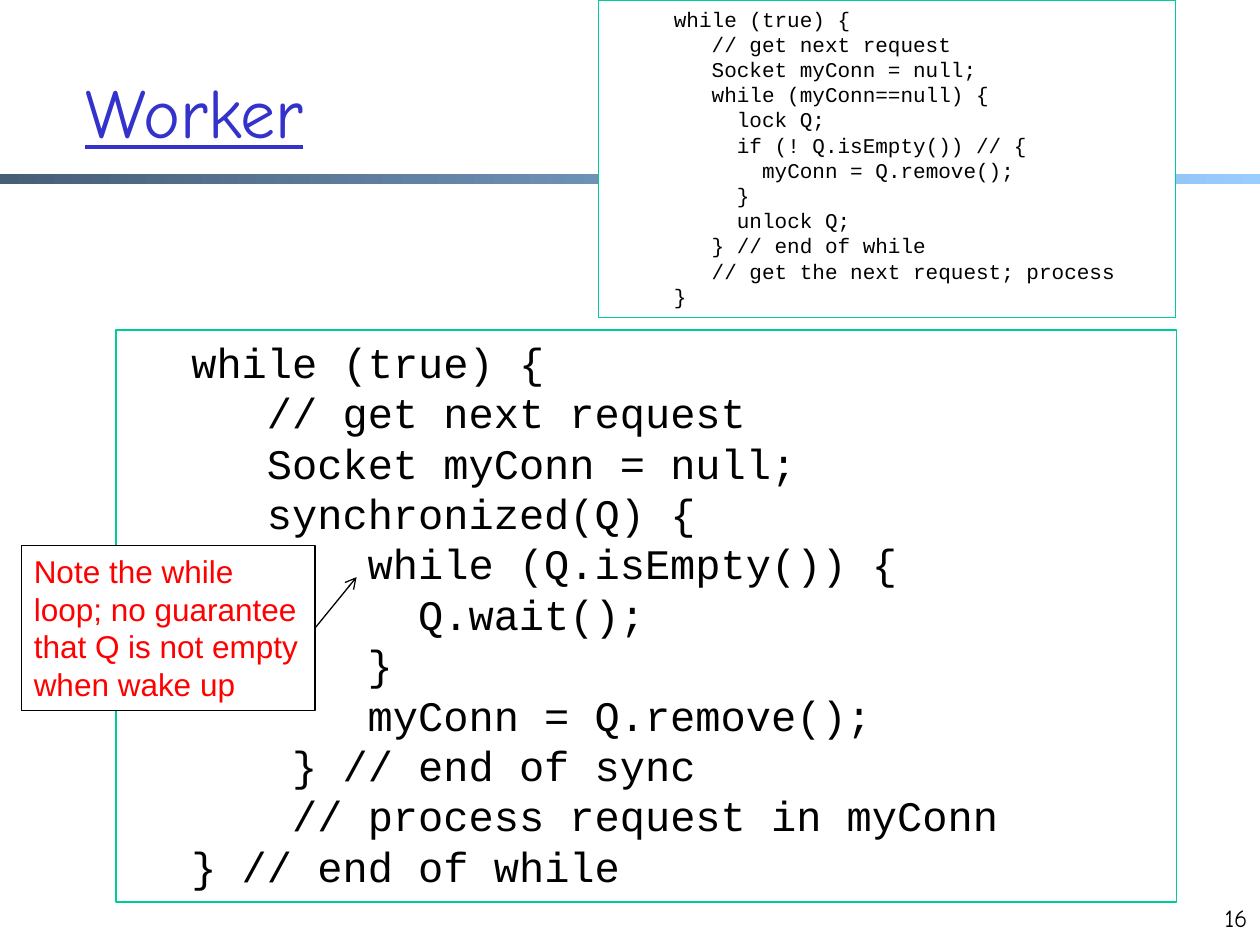
from dataclasses import dataclass

import pptx
import pptx.dml.color
import pptx.enum.dml
import pptx.enum.shapes
import pptx.enum.text
import pptx.oxml
import pptx.oxml.ns
import pptx.util
from pptx.util import Inches

COLORS = {
    "ink": "000000", "paper": "FFFFFF", "title": "3333CC",
    "frame": "00CC99", "note": "FF0000", "dark": "475E76", "light": "99CCFF",
}
RECT = pptx.enum.shapes.MSO_SHAPE.RECTANGLE
ALIGN = pptx.enum.text.PP_ALIGN
ANCHOR = pptx.enum.text.MSO_ANCHOR
CODE_LEFT = 0.5
CHAR_RATIO = 0.6


@dataclass
class Box:
    left: float
    top: float
    width: float
    height: float

    def place(self) -> tuple:
        return tuple(Inches(n) for n in (self.left, self.top, self.width, self.height))


@dataclass
class Font:
    name: str
    size: int
    color: str = "ink"
    line: bool = False


@dataclass
class Code:
    box: Box
    size: int
    fill: str | None
    lines: list[tuple[int, str]]


CODES = [
    Code(Box(0.92, 2.62, 8.42, 4.54), 24, None, [
        (0, "while (true) {"),
        (3, "// get next request"),
        (3, "Socket myConn = null;"),
        (3, "synchronized(Q) {"),
        (7, "while (Q.isEmpty()) {"),
        (9, "Q.wait();"),
        (7, "}"),
        (7, "myConn = Q.remove();"),
        (4, "} // end of sync"),
        (4, "// process request in myConn"),
        (0, "} // end of while"),
    ]),
    Code(Box(4.75, 0, 4.58, 2.52), 12, "paper", [
        (0, "while (true) {"),
        (3, "// get next request"),
        (3, "Socket myConn = null;"),
        (3, "while (myConn==null) {"),
        (5, "lock Q;"),
        (5, "if (! Q.isEmpty()) // {"),
        (7, "myConn = Q.remove();"),
        (5, "}"),
        (5, "unlock Q;"),
        (3, "} // end of while"),
        (3, "// get the next request; process"),
        (0, "}"),
    ]),
]


def rgb(key: str) -> pptx.dml.color.RGBColor:
    return pptx.dml.color.RGBColor.from_string(COLORS[key])


def style(para, font: Font, align=ALIGN.LEFT) -> None:
    para.alignment = align
    para.font.name = font.name
    para.font.size = pptx.util.Pt(font.size)
    para.font.color.rgb = rgb(font.color)
    para.font.underline = font.line


def add_label(slide, box: Box, text: str, font: Font, align, anchor) -> None:
    frame = slide.shapes.add_textbox(*box.place()).text_frame
    frame.word_wrap = True
    frame.vertical_anchor = anchor
    para = frame.paragraphs[0]
    para.text = text
    style(para, font, align)


def add_panel(slide, box: Box, fill: str | None, line: str):
    panel = slide.shapes.add_shape(RECT, *box.place())
    panel.shadow.inherit = False
    if fill:
        panel.fill.solid()
        panel.fill.fore_color.rgb = rgb(fill)
    else:
        panel.fill.background()
    panel.line.color.rgb = rgb(line)
    panel.line.width = pptx.util.Pt(0.75)
    panel.text_frame.word_wrap = True
    panel.text_frame.vertical_anchor = ANCHOR.TOP
    return panel


def add_code(slide, code: Code) -> None:
    frame = add_panel(slide, code.box, code.fill, "frame").text_frame
    font = Font("Courier New", code.size)
    for row, (depth, text) in enumerate(code.lines):
        para = frame.add_paragraph() if row else frame.paragraphs[0]
        para.text = text
        style(para, font)
        left = Inches(CODE_LEFT + depth * CHAR_RATIO * code.size / 72)
        props = para._p.get_or_add_pPr()
        props.set("marL", str(left))
        props.set("indent", "0")


def add_bar(slide) -> None:
    bar = slide.shapes.add_shape(RECT, *Box(0, 1.38, 10, 0.08).place())
    bar.shadow.inherit = False
    bar.line.fill.background()
    bar.fill.gradient()
    bar.fill.gradient_angle = 0
    for stop, key in zip(bar.fill.gradient_stops, ("dark", "light")):
        stop.color.rgb = rgb(key)


def add_note(slide) -> None:
    note = add_panel(slide, Box(0.17, 4.33, 2.33, 1.31), "paper", "ink")
    para = note.text_frame.paragraphs[0]
    para.text = "Note the while\nloop; no guarantee\nthat Q is not empty\nwhen wake up"
    style(para, Font("Arial", 18, "note"))
    arrow = slide.shapes.add_connector(
        pptx.enum.shapes.MSO_CONNECTOR.STRAIGHT,
        Inches(2.5), Inches(4.99), Inches(2.83), Inches(4.58))
    arrow.begin_connect(note, 3)
    arrow.line.color.rgb = rgb("ink")
    arrow.line.width = pptx.util.Pt(0.75)
    head = pptx.oxml.parse_xml(
        f'<a:tailEnd {pptx.oxml.ns.nsdecls("a")} type="arrow"/>')
    arrow.line._get_or_add_ln().append(head)
    arrow._element.spPr.append(
        pptx.oxml.parse_xml(f'<a:effectLst {pptx.oxml.ns.nsdecls("a")}/>'))


def main() -> None:
    deck = pptx.Presentation()
    deck.slide_width, deck.slide_height = Inches(10), Inches(7.5)
    slide = deck.slides.add_slide(deck.slide_layouts[6])
    add_bar(slide)
    add_label(slide, Box(0.58, 0.25, 8.5, 1.25), "Worker",
              Font("Comic Neue", 40, "title", True), ALIGN.LEFT, ANCHOR.MIDDLE)
    add_label(slide, Box(9.5, 7.12, 0.5, 0.5), "16",
              Font("Comic Neue", 14), ALIGN.RIGHT, ANCHOR.TOP)
    for code in CODES:
        add_code(slide, code)
    add_note(slide)
    deck.save("out.pptx")


if __name__ == "__main__":
    main()
